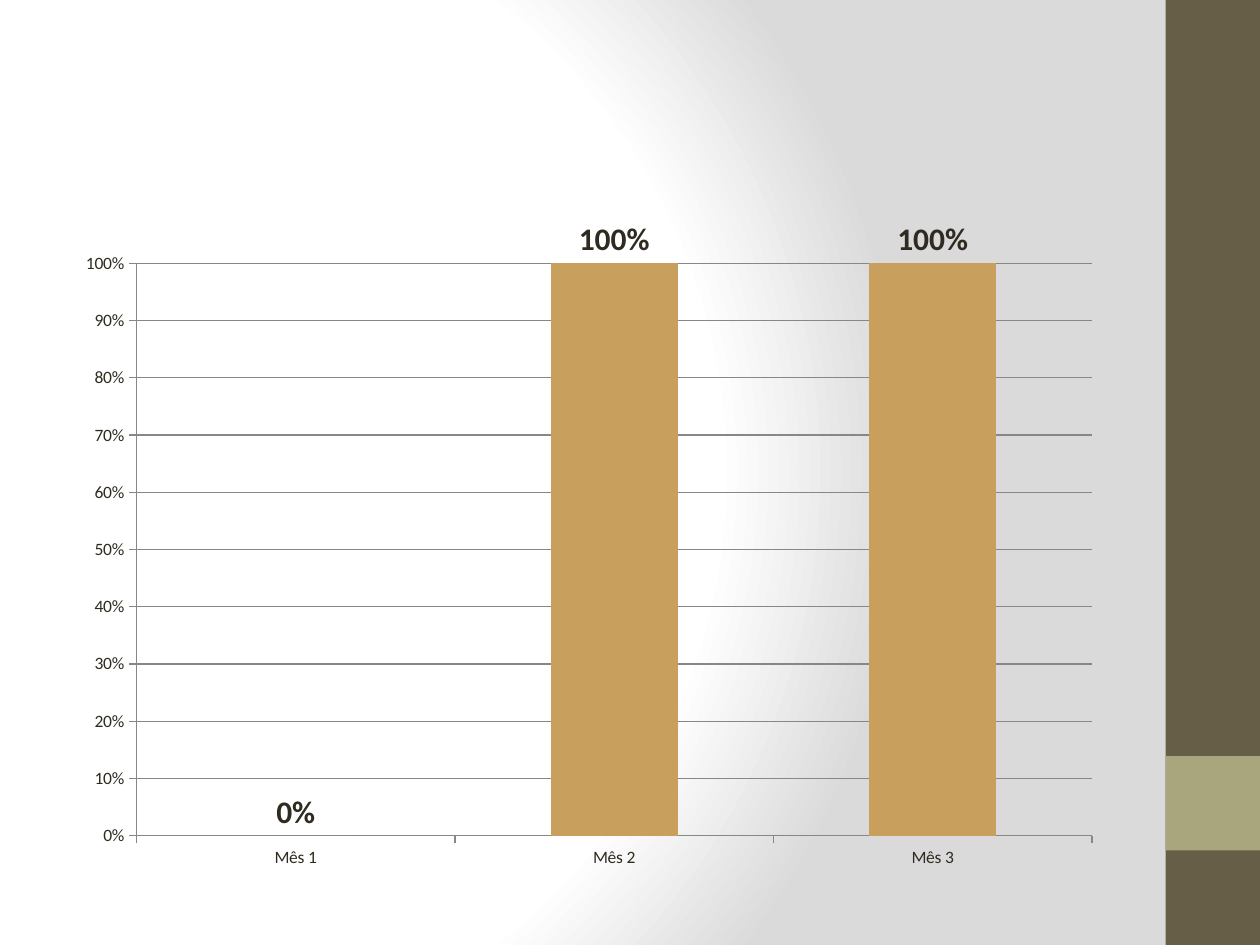
from lxml.etree import SubElement
from pptx import Presentation
from pptx.chart.data import CategoryChartData
from pptx.dml.color import RGBColor
from pptx.enum.chart import XL_CHART_TYPE, XL_LABEL_POSITION, XL_TICK_MARK
from pptx.enum.shapes import MSO_SHAPE
from pptx.oxml import parse_xml
from pptx.oxml.ns import nsdecls, qn
from pptx.util import Emu, Pt

PX = 9525  # EMU per px, 96 px to the inch
WIDTH, HEIGHT = 960, 720
FONT = "Calibri"
COLORS = {
    "white": "FFFFFF",
    "gray": "DADADA",
    "band": "675E47",
    "accent": "A9A57C",
    "bar": "C89F5D",
    "text": "2F2B20",
    "line": "878787",
}


def px(*lengths):
    return [Emu(length * PX) for length in lengths]


def color(name):
    return RGBColor.from_string(COLORS[name])


def style_font(font, size, bold=False, fill="text"):
    font.name = FONT
    font.size = Pt(size)
    font.bold = bold
    font.color.rgb = color(fill)


def style_line(line):
    line.color.rgb = color("line")
    line.width = Pt(0.75)


def set_background(page):
    """Radial gradient, white in the middle and gray outside."""
    fill = page.background.fill
    fill.gradient()
    stops = "".join(
        f'<a:gs pos="{percent * 1000}"><a:srgbClr val="{COLORS[name]}"/></a:gs>'
        for percent, name in ((0, "white"), (75, "white"), (100, "gray"))
    )
    gradient = parse_xml(
        f'<a:gradFill {nsdecls("a")} rotWithShape="1"><a:gsLst>{stops}</a:gsLst>'
        '<a:path path="circle">'
        '<a:fillToRect l="20000" t="50000" r="100000" b="50000"/>'
        "</a:path></a:gradFill>"
    )
    current = next(page.element.iter(qn("a:gradFill")))
    current.getparent().replace(current, gradient)


def add_block(page, left, top, width, height, fill):
    block = page.shapes.add_shape(MSO_SHAPE.RECTANGLE, *px(left, top, width, height))
    block.shadow.inherit = False
    block.fill.solid()
    block.fill.fore_color.rgb = color(fill)
    block.line.fill.background()


def set_plot_area(chart, **fractions):
    """Place the inner plot area as fractions of the chart frame."""
    area = next(chart.element.iter(qn("c:plotArea")))
    for layout in area.findall(qn("c:layout")):
        area.remove(layout)
    layout = parse_xml(f'<c:layout {nsdecls("c")}/>')
    area.insert(0, layout)
    manual = SubElement(layout, qn("c:manualLayout"))
    settings = {"layoutTarget": "inner", "xMode": "edge", "yMode": "edge", **fractions}
    for tag, value in settings.items():
        SubElement(manual, qn(f"c:{tag}")).set("val", str(value))


def add_column_chart(page, left, top, width, height, categories, values):
    data = CategoryChartData(number_format="0%")
    data.categories = categories
    data.add_series("Series 1", values)
    frame = page.shapes.add_chart(
        XL_CHART_TYPE.COLUMN_CLUSTERED, *px(left, top, width, height), data
    )
    chart = frame.chart
    chart.has_legend = False
    chart.has_title = False
    style_font(chart.font, 10)
    set_plot_area(chart, x=0.07, y=0.06, w=0.91, h=0.87)

    # Axes
    for axis in (chart.category_axis, chart.value_axis):
        axis.major_tick_mark = XL_TICK_MARK.OUTSIDE
        axis.minor_tick_mark = XL_TICK_MARK.NONE
        style_line(axis.format.line)
    scale = chart.value_axis
    scale.minimum_scale, scale.maximum_scale, scale.major_unit = 0, 1, 0.1
    scale.tick_labels.number_format = "0%"
    scale.tick_labels.number_format_is_linked = False
    scale.has_major_gridlines = True
    style_line(scale.major_gridlines.format.line)

    # Columns and their labels
    plot = chart.plots[0]
    plot.gap_width = 150
    plot.vary_by_categories = False
    series = plot.series[0]
    series.format.fill.solid()
    series.format.fill.fore_color.rgb = color("bar")
    labels = series.data_labels
    labels.show_value = True
    labels.number_format = "0%"
    labels.number_format_is_linked = False
    labels.position = XL_LABEL_POSITION.OUTSIDE_END
    style_font(labels.font, 18, bold=True)


def main():
    deck = Presentation()
    deck.slide_width, deck.slide_height = px(WIDTH, HEIGHT)
    page = deck.slides.add_slide(deck.slide_layouts[6])
    set_background(page)

    # Side band with its accent square
    band = 72
    add_block(page, WIDTH - band, 0, band, HEIGHT, "band")
    add_block(page, WIDTH - band, HEIGHT - 2 * band, band, band, "accent")

    months = [f"Mês {number}" for number in range(1, 4)]
    add_column_chart(page, 48, 168, 800, 504, months, (0, 1, 1))
    deck.save("out.pptx")


if __name__ == "__main__":
    main()
